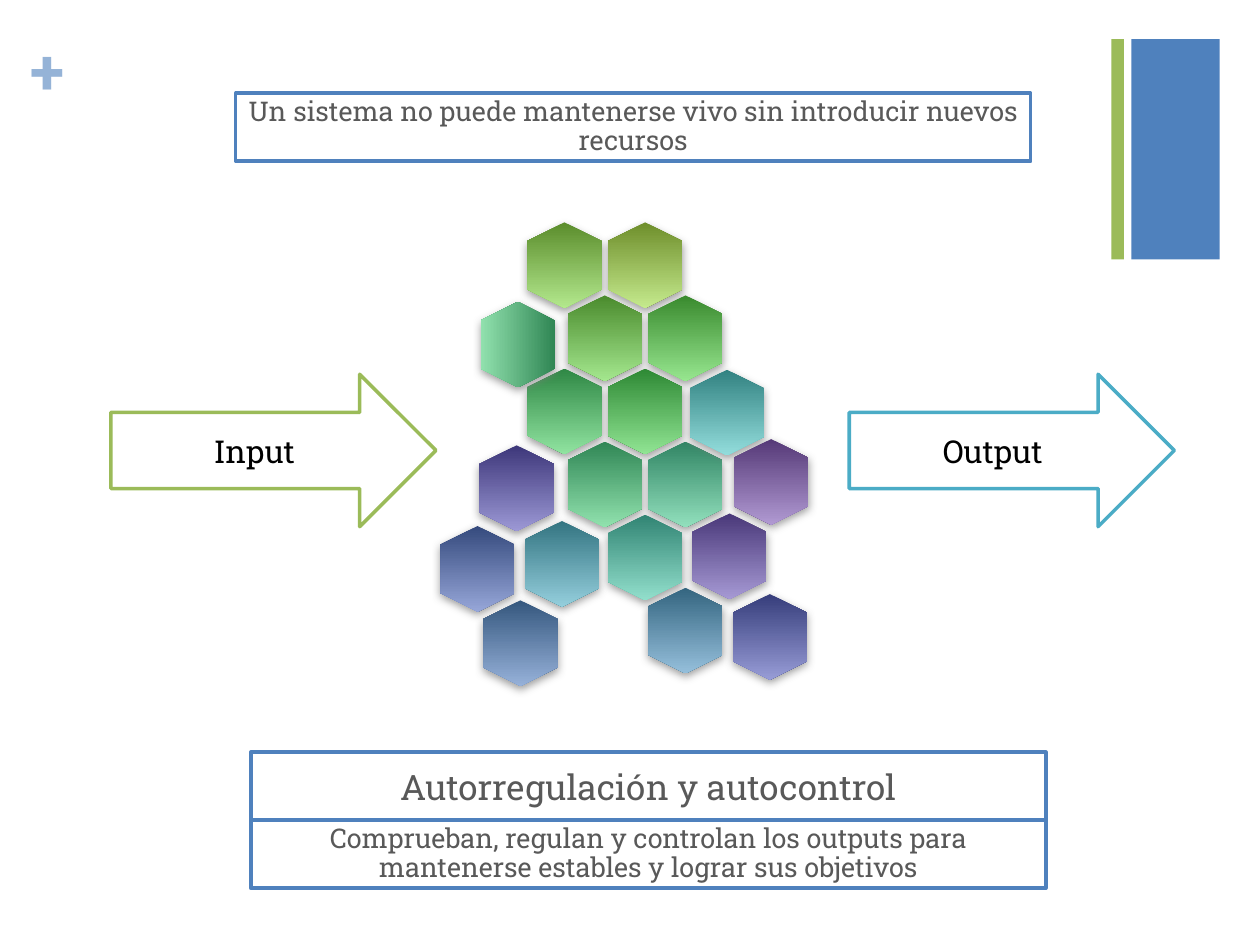
from lxml import etree
from pptx import Presentation
from pptx.dml.color import RGBColor
from pptx.enum.shapes import MSO_SHAPE
from pptx.enum.text import MSO_ANCHOR, PP_ALIGN
from pptx.oxml import parse_xml
from pptx.util import Inches, Pt

THEME = {
    "font": "Roboto Slab",
    "blue": "4F81BD", "green": "9BBB59", "aqua": "4BACC6", "pale": "95B3D7",
    "white": "FFFFFF", "black": "000000", "grey": "595959", "shadow": "808080",
    "plus": 36, "heading": 20, "label": 18, "body": 15.5, "line": 2,
}

BARS = [((8.98, 0.31, 0.7, 1.75), "blue"), ((8.82, 0.31, 0.1, 1.75), "green")]

# text, left, outline
ARROWS = [("Input", 0.88, "green"), ("Output", 6.74, "aqua")]
ARROW_TOP, ARROW_W, ARROW_H = 2.97, 2.58, 1.21

# text, left, top, type size, line spacing
BOXES = [
    ("Un sistema no puede mantenerse vivo sin introducir nuevos recursos",
     1.87, 0.74, "body", 0.9),
    ("Autorregulación y autocontrol", 1.99, 5.97, "heading", 1.0),
    ("Comprueban, regulan y controlan los outputs para mantenerse estables "
     "y lograr sus objetivos", 1.99, 6.51, "body", 0.9),
]
BOX_W, BOX_H = 6.31, 0.54

# Regular honeycomb: column (half steps), row, dark colour, light colour
HEX_W, HEX_H = 0.68, 0.59
GRID_LEFT, GRID_TOP, HALF_STEP, ROW_STEP = 4.14, 1.81, 0.32, 0.58
GRID_CELLS = [
    (2, 0, "6E8E2B", "C5EA8D"), (0, 0, "5B8D2C", "B3E88D"),
    (1, 1, "4A8B2D", "A4E78E"), (3, 1, "398A2E", "97E68F"),
    (2, 2, "2E8934", "90E493"), (0, 2, "2F8845", "90E3A0"),
    (1, 3, "308655", "91E2AE"), (3, 3, "318564", "92E0BD"),
    (2, 4, "318473", "92DFCC"), (3, 5, "346580", "95BFDB"),
]
# Cells loosened from the comb: left, top, dark colour, light colour
LOOSE_CELLS = [
    (5.43, 2.98, "328281", "93DDDC"), (4.12, 4.18, "337481", "94CEDC"),
    (3.79, 4.81, "35577E", "96B1D9"), (3.45, 4.22, "354A7D", "96A6D8"),
    (5.77, 4.76, "363D7B", "979CD6"), (3.76, 3.58, "3D377A", "9C98D5"),
    (5.45, 4.12, "493879", "A699D4"), (5.78, 3.53, "553977", "B099D2"),
]
ENTERING_CELL = (3.77, 2.44, "308654", "91E1AE")

SHADOW_XML = (
    '<a:effectLst xmlns:a="http://schemas.openxmlformats.org/drawingml/2006/main">'
    f'<a:outerShdw blurRad="{Pt(5)}" dist="{Pt(2)}" dir="5400000" rotWithShape="0">'
    f'<a:srgbClr val="{THEME["shadow"]}"><a:alpha val="75000"/></a:srgbClr>'
    '</a:outerShdw></a:effectLst>')


def rgb(name):
    return RGBColor.from_string(THEME[name])


def add_shape(slide, kind, at, fill=None, line=None):
    sp = slide.shapes.add_shape(kind, *map(Inches, at))
    sp.shadow.inherit = False
    if fill:
        sp.fill.solid()
        sp.fill.fore_color.rgb = rgb(fill)
    if line:
        sp.line.color.rgb = rgb(line)
        sp.line.width = Pt(THEME["line"])
    else:
        sp.line.fill.background()
    return sp


def write(sp, words, size, color, bold=False, align=PP_ALIGN.CENTER):
    sp.text_frame.word_wrap = True
    p = sp.text_frame.paragraphs[0]
    p.alignment = align
    r = p.add_run()
    r.text = words
    r.font.name = THEME["font"]
    r.font.size = Pt(THEME[size])
    r.font.bold = bold
    r.font.color.rgb = rgb(color)
    return p


def add_cell(slide, left, top, dark, light, angle=0):
    """Add a hexagon turned a quarter; the gradient angle turns with it."""
    sp = add_shape(slide, MSO_SHAPE.HEXAGON, (left, top, HEX_W, HEX_H))
    sp.rotation = 90
    sp.adjustments[0], sp.adjustments[1] = 0.25, 1.1547
    sp.fill.gradient()
    sp.fill.gradient_angle = angle
    for stop, position, color in zip(sp.fill.gradient_stops, (0, 1), (dark, light)):
        stop.position = position
        stop.color.rgb = RGBColor.from_string(color)
    props = sp._element.spPr
    empty = props.find("{*}effectLst")
    props.replace(empty, parse_xml(SHADOW_XML))


def main():
    prs = Presentation()
    prs.slide_width, prs.slide_height = Inches(10), Inches(7.5)
    slide = prs.slides.add_slide(prs.slide_layouts[6])

    for at, fill in BARS:
        add_shape(slide, MSO_SHAPE.RECTANGLE, at, fill)
    plus = slide.shapes.add_textbox(*map(Inches, (0.24, 0.25, 0.29, 0.61)))
    tf = plus.text_frame
    tf.margin_left = tf.margin_right = tf.margin_top = tf.margin_bottom = 0
    write(plus, "+", "plus", "pale", bold=True, align=PP_ALIGN.LEFT)

    for col, row, dark, light in GRID_CELLS:
        add_cell(slide, GRID_LEFT + col * HALF_STEP, GRID_TOP + row * ROW_STEP,
                 dark, light)
    for cell in LOOSE_CELLS:
        add_cell(slide, *cell)
    add_cell(slide, *ENTERING_CELL, angle=270)

    for words, left, line in ARROWS:
        sp = add_shape(slide, MSO_SHAPE.RIGHT_ARROW,
                       (left, ARROW_TOP, ARROW_W, ARROW_H), "white", line)
        sp.text_frame.vertical_anchor = MSO_ANCHOR.MIDDLE
        write(sp, words, "label", "black")

    for words, left, top, size, spacing in BOXES:
        sp = add_shape(slide, MSO_SHAPE.RECTANGLE, (left, top, BOX_W, BOX_H),
                       "white", "blue")
        sp.text_frame.vertical_anchor = MSO_ANCHOR.MIDDLE
        p = write(sp, words, size, "grey")
        p.space_before = Pt(20)
        p.line_spacing = spacing

    prs.save("out.pptx")


if __name__ == "__main__":
    main()
